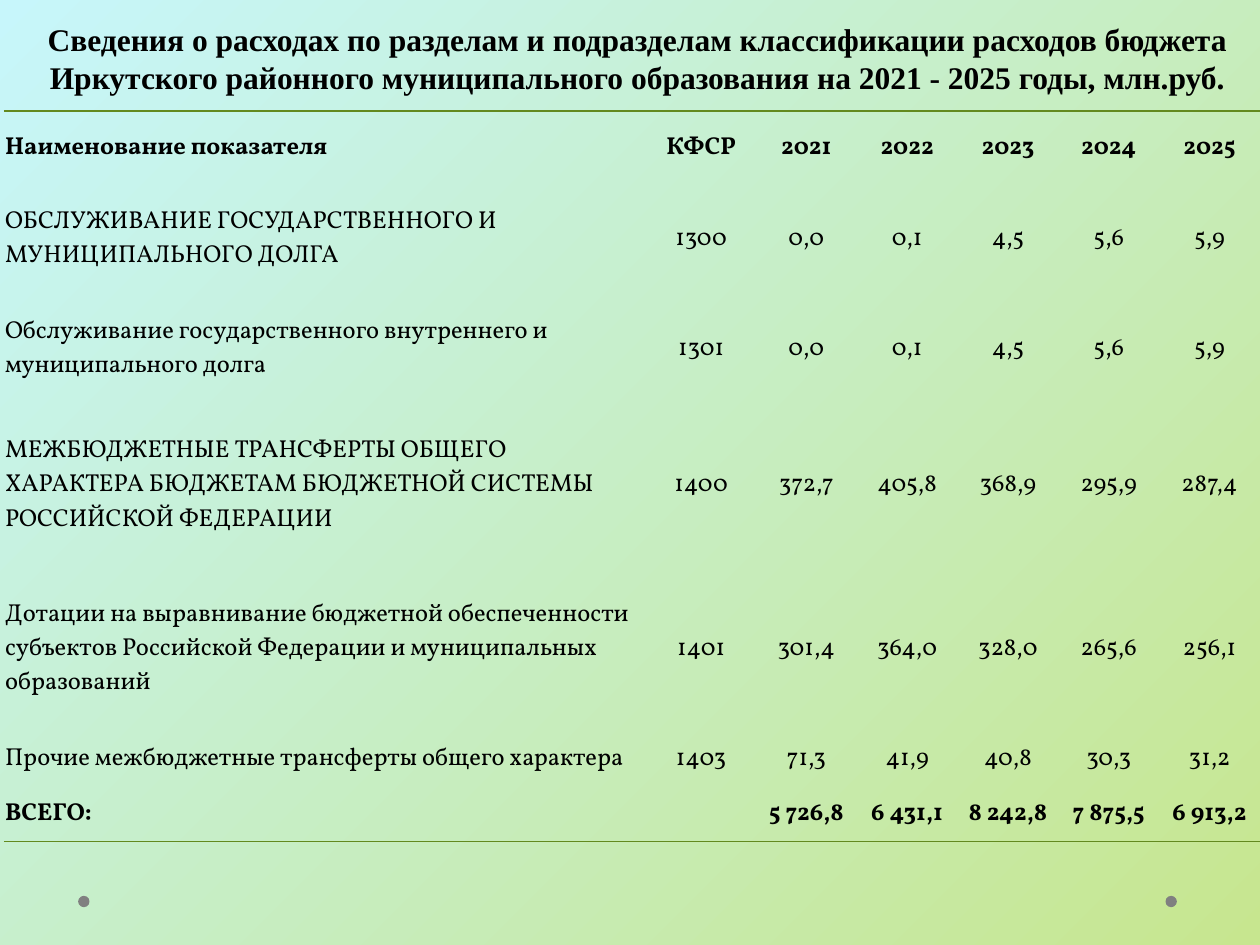
from dataclasses import dataclass
from typing import Any

from lxml import etree
from pptx import Presentation
from pptx import util as u
from pptx.dml.color import RGBColor
from pptx.enum import shapes, text
from pptx.oxml import ns

BLACK = RGBColor(0x00, 0x00, 0x00)
GREEN = RGBColor(0x63, 0x89, 0x1F)
GRAY = RGBColor(0x80, 0x80, 0x80)
SKY = RGBColor(0xC7, 0xF6, 0xFB)
LIME = RGBColor(0xC7, 0xE6, 0x8F)
PLAIN_TABLE = "{2D5ABB26-0587-4C30-8999-92F81FD0307C}"

TITLE = (
    "Сведения о расходах по разделам и подразделам классификации расходов бюджета "
    "Иркутского районного муниципального образования на 2021 - 2025 годы, млн.руб."
)
COLUMN_WIDTHS = [5.1, 0.87] + [0.8] * 5
ROW_HEIGHTS = [0.58, 0.87, 0.87, 1.3, 1.3, 0.44, 0.44]
EXPENSES = [
    ["Наименование показателя", "КФСР", "2021", "2022", "2023", "2024", "2025"],
    ["ОБСЛУЖИВАНИЕ ГОСУДАРСТВЕННОГО И МУНИЦИПАЛЬНОГО ДОЛГА",
     "1300", "0,0", "0,1", "4,5", "5,6", "5,9"],
    ["Обслуживание государственного внутреннего и муниципального долга",
     "1301", "0,0", "0,1", "4,5", "5,6", "5,9"],
    ["МЕЖБЮДЖЕТНЫЕ ТРАНСФЕРТЫ ОБЩЕГО ХАРАКТЕРА БЮДЖЕТАМ БЮДЖЕТНОЙ СИСТЕМЫ "
     "РОССИЙСКОЙ ФЕДЕРАЦИИ",
     "1400", "372,7", "405,8", "368,9", "295,9", "287,4"],
    ["Дотации на выравнивание бюджетной обеспеченности субъектов Российской "
     "Федерации и муниципальных образований",
     "1401", "301,4", "364,0", "328,0", "265,6", "256,1"],
    ["Прочие межбюджетные трансферты общего характера",
     "1403", "71,3", "41,9", "40,8", "30,3", "31,2"],
    ["ВСЕГО:", "", "5 726,8", "6 431,1", "8 242,8", "7 875,5", "6 913,2"],
]


def write_text(frame, words, *, font, size, color=BLACK, bold=False, align="LEFT"):
    para = frame.paragraphs[0]
    para.alignment = getattr(text.PP_ALIGN, align)
    span = para.add_run()
    span.text = words
    span.font.name = font
    span.font.size = u.Pt(size)
    span.font.bold = bold
    span.font.color.rgb = color


def draw_border(cell, side, color, width):
    properties = cell._tc.get_or_add_tcPr()
    line = etree.Element(ns.qn(f"a:{side}"), w=str(u.Pt(width)))
    fill = etree.SubElement(line, ns.qn("a:solidFill"))
    etree.SubElement(fill, ns.qn("a:srgbClr"), val=str(color))
    properties.insert(0, line)


@dataclass
class SlideBuilder:
    slide: Any
    title_font: str = "Times New Roman"
    table_font: str = "Vollkorn"
    title_size: int = 18
    table_size: int = 14

    def background(self, start, end):
        fill = self.slide.background.fill
        fill.gradient()
        fill.gradient_angle = 315
        for stop, color, position in zip(fill.gradient_stops, (start, end), (0, 1)):
            stop.color.rgb = color
            stop.position = position

    def dot(self, left, top, size):
        dot = self.slide.shapes.add_shape(
            shapes.MSO_SHAPE.OVAL,
            u.Inches(left), u.Inches(top), u.Inches(size), u.Inches(size),
        )
        dot.shadow.inherit = False
        dot.fill.solid()
        dot.fill.fore_color.rgb = GRAY
        dot.line.fill.background()

    def title(self, words, left, top, width, height):
        box = self.slide.shapes.add_textbox(
            u.Inches(left), u.Inches(top), u.Inches(width), u.Inches(height)
        )
        frame = box.text_frame
        frame.word_wrap = True
        frame.vertical_anchor = text.MSO_ANCHOR.BOTTOM
        write_text(frame, words, font=self.title_font, size=self.title_size,
                   bold=True, align="CENTER")

    def table(self, rows, left, top, widths, heights):
        table = self.slide.shapes.add_table(
            len(heights), len(widths), u.Inches(left), u.Inches(top),
            u.Inches(sum(widths)), u.Inches(sum(heights)),
        ).table
        table._tbl.tblPr.find(ns.qn("a:tableStyleId")).text = PLAIN_TABLE
        table.first_row = table.horz_banding = False
        for column, width in zip(table.columns, widths):
            column.width = u.Inches(width)
        for row, height in zip(table.rows, heights):
            row.height = u.Inches(height)
        last = len(rows) - 1
        for i, row in enumerate(rows):
            for j, words in enumerate(row):
                cell = table.cell(i, j)
                cell.fill.background()
                cell.vertical_anchor = text.MSO_ANCHOR.MIDDLE
                cell.margin_left = cell.margin_right = cell.margin_top = u.Inches(0.01)
                cell.margin_bottom = 0
                if words:
                    write_text(cell.text_frame, words, font=self.table_font,
                               size=self.table_size, bold=i in (0, last),
                               align="CENTER" if j else "LEFT")
                if i in (0, last):
                    draw_border(cell, "lnB" if i else "lnT", GREEN, 1)


def main():
    deck = Presentation()
    deck.slide_width, deck.slide_height = u.Inches(10), u.Inches(7.5)
    builder = SlideBuilder(deck.slides.add_slide(deck.slide_layouts[6]))
    builder.background(SKY, LIME)
    for left in (9.25, 0.62):
        builder.dot(left, 7.11, 0.09)
    builder.table(EXPENSES, 0.03, 0.88, COLUMN_WIDTHS, ROW_HEIGHTS)
    builder.title(TITLE, 0.12, 0.05, 9.88, 0.76)
    deck.save("out.pptx")


if __name__ == "__main__":
    main()
